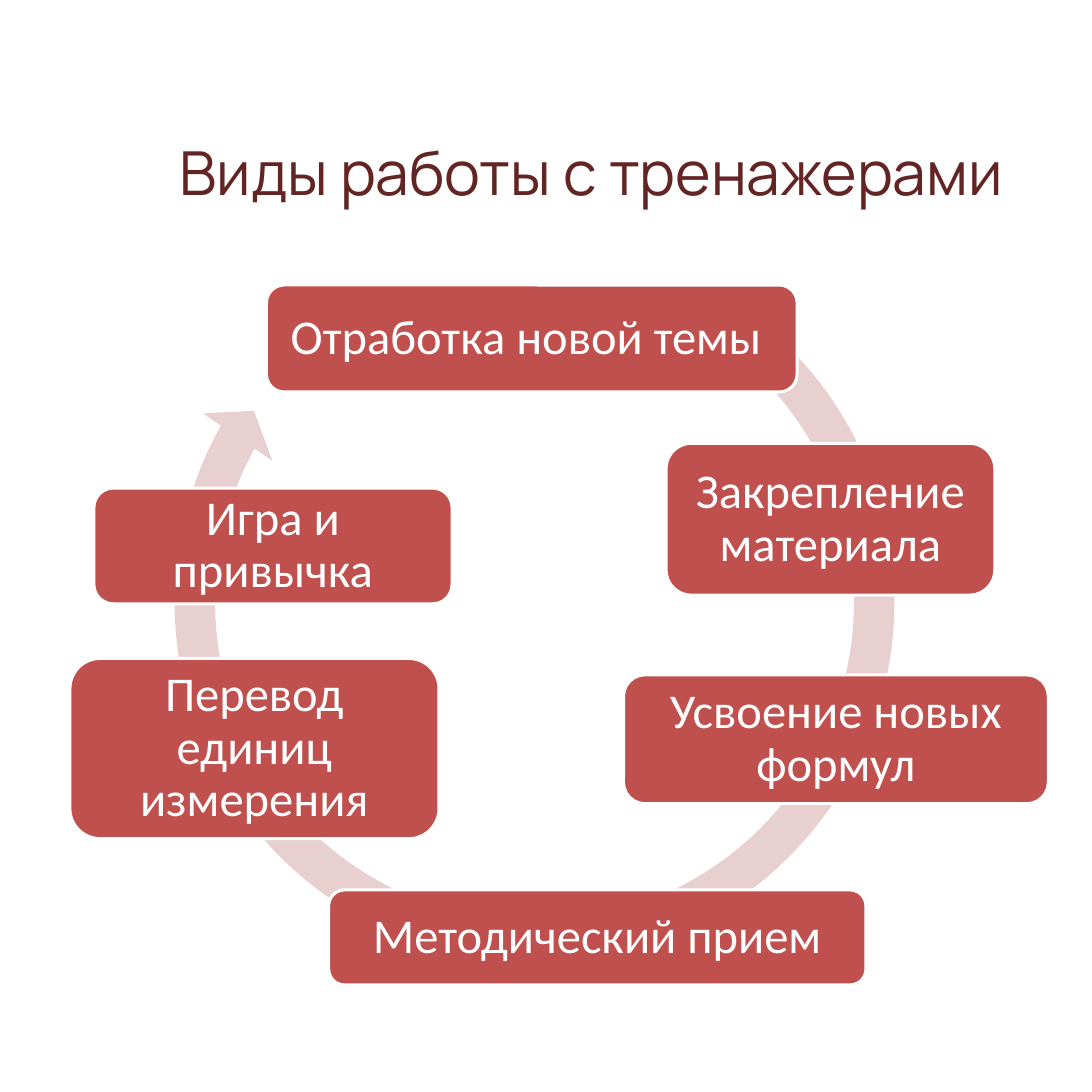
from pptx import Presentation
from pptx.dml.color import RGBColor
from pptx.enum.shapes import MSO_SHAPE
from pptx.enum.text import MSO_ANCHOR, PP_ALIGN
from pptx.util import Inches, Pt

STEPS = [
    ("Отработка новой темы ", 2.44, 2.61, 4.86, 0.98),
    ("Закрепление материала", 6.1, 4.06, 3.01, 1.39),
    ("Усвоение новых формул", 5.71, 6.18, 3.89, 1.18),
    ("Методический прием", 3.01, 8.15, 4.92, 0.87),
    ("Перевод единиц измерения", 0.64, 6.03, 3.38, 1.65),
    ("Игра и привычка", 0.86, 4.47, 3.28, 1.06),
]
ARROW_ADJUSTMENTS = (0.053, 3.126, 125.451, 182.02, 0.055)


def rgb(value):
    """Return the colour for a hex string."""
    return RGBColor.from_string(value)


def set_all(target, formats):
    """Set every attribute named in formats on target."""
    for name, value in formats.items():
        setattr(target, name, value)


def write(sp, text, font, size, color, inset=0.1, spacing=1.0):
    """Write one centred paragraph into a shape."""
    tf = sp.text_frame
    set_all(tf, {
        "word_wrap": True,
        "vertical_anchor": MSO_ANCHOR.MIDDLE,
        "margin_left": Inches(inset),
        "margin_right": Inches(inset),
        "margin_top": Inches(inset),
        "margin_bottom": Inches(inset),
    })
    p = tf.paragraphs[0]
    set_all(p, {"alignment": PP_ALIGN.CENTER, "line_spacing": spacing})
    r = p.add_run()
    r.text = text
    set_all(r.font, {"name": font, "size": Pt(size)})
    r.font.color.rgb = rgb(color)


def add_filled(s, kind, box, fill):
    """Add a flat filled shape without a line."""
    sp = s.shapes.add_shape(kind, *map(Inches, box))
    sp.shadow.inherit = False
    sp.fill.solid()
    sp.fill.fore_color.rgb = rgb(fill)
    sp.line.fill.background()
    return sp


def add_title(s, text):
    """Add the slide title."""
    sp = s.shapes.add_textbox(*map(Inches, (0.97, 0.73, 9, 1.67)))
    write(sp, text, "Manrope", 40, "632523")


def add_cycle_arrow(s):
    """Add the ring arrow that runs behind the steps."""
    sp = add_filled(s, MSO_SHAPE.CIRCULAR_ARROW, (1.4, 2.02, 6.99, 6.99), "E8D0D0")
    for i, value in enumerate(ARROW_ADJUSTMENTS):
        sp.adjustments[i] = value


def add_step(s, text, *box):
    """Add one rounded step of the cycle."""
    sp = add_filled(s, MSO_SHAPE.ROUNDED_RECTANGLE, box, "C0504D")
    sp.line.color.rgb = rgb("FFFFFF")
    sp.line.width = Pt(2)
    write(sp, text, "Calibri", 32, "FFFFFF", inset=0.13, spacing=0.9)


def main():
    """Build the slide and save it."""
    prs = Presentation()
    set_all(prs, {"slide_width": Inches(10), "slide_height": Inches(10)})
    s = prs.slides.add_slide(prs.slide_layouts[6])
    add_title(s, "Виды работы с тренажерами ")
    add_cycle_arrow(s)
    for step in STEPS:
        add_step(s, *step)
    prs.save("out.pptx")


if __name__ == "__main__":
    main()
